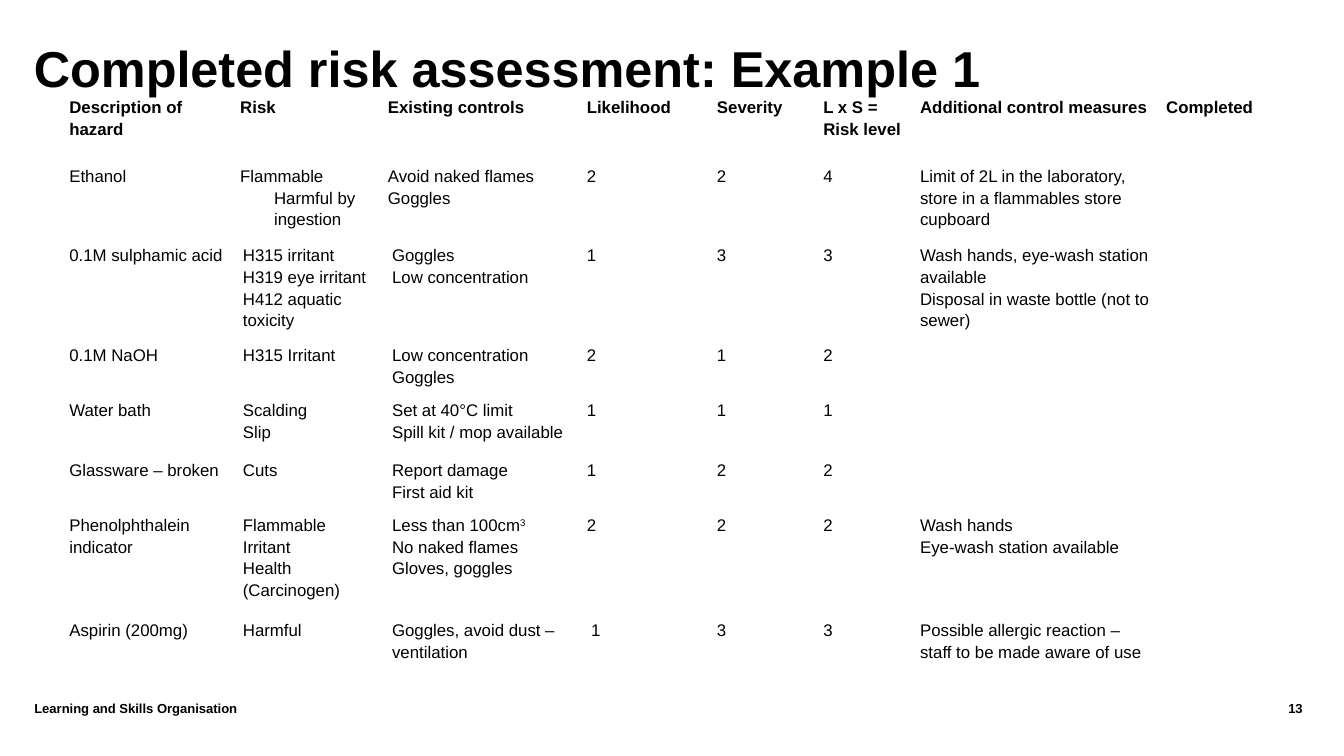
from pptx import Presentation
from pptx.enum.text import MSO_ANCHOR, PP_ALIGN
from pptx.dml.color import RGBColor
from pptx.oxml.ns import qn
from pptx.util import Cm, Pt

LEFT, RIGHT = PP_ALIGN.LEFT, PP_ALIGN.RIGHT
TOP = MSO_ANCHOR.TOP
NO_STYLE_NO_GRID = "{2D5ABB26-0587-4C30-8999-92F81FD0307C}"
COLORS = {"text": "000000"}

COL_WIDTHS = [3.23, 2.79, 3.76, 2.46, 2.01, 1.83, 4.65, 1.98]
ROW_HEIGHTS = [1.3, 1.5, 1.88, 1.04, 1.14, 1.04, 1.98, 1.55]

# One line per paragraph; "^" starts a superscript
ROWS = [
    ["Description of hazard", "Risk", "Existing controls", "Likelihood", "Severity",
     "L x S = Risk level", "Additional control measures", "Completed"],
    ["Ethanol", "Flammable\nHarmful by ingestion", "Avoid naked flames\nGoggles",
     "2", "2", "4",
     "Limit of 2L in the laboratory, store in a flammables store cupboard", ""],
    ["0.1M sulphamic acid", "H315 irritant\nH319 eye irritant\nH412 aquatic toxicity",
     "Goggles\nLow concentration", "1", "3", "3",
     "Wash hands, eye-wash station available\nDisposal in waste bottle (not to sewer)", ""],
    ["0.1M NaOH", "H315 Irritant", "Low concentration\nGoggles", "2", "1", "2", "", ""],
    ["Water bath", "Scalding\nSlip", "Set at 40°C limit\nSpill kit / mop available",
     "1", "1", "1", "", ""],
    ["Glassware – broken", "Cuts", "Report damage\nFirst aid kit", "1", "2", "2", "", ""],
    ["Phenolphthalein indicator", "Flammable\nIrritant\nHealth (Carcinogen)",
     "Less than 100cm^3\nNo naked flames\nGloves, goggles", "2", "2", "2",
     "Wash hands\nEye-wash station available", ""],
    ["Aspirin (200mg)", "Harmful", "Goggles, avoid dust – ventilation", "1", "3", "3",
     "Possible allergic reaction – staff to be made aware of use", ""],
]

HANGING = (0.64, -0.64)
RISK_INDENT, CONTROL_INDENT = (0.05, 0), (0.08, 0)
# Left margin and first-line indent per paragraph, by (row, column)
INDENTS = {(1, 1): [HANGING, (0.64, 0)], (1, 2): [HANGING] * 2, (7, 3): [CONTROL_INDENT]}
for row in range(2, len(ROWS)):
    INDENTS[row, 1] = [RISK_INDENT] * 3
    INDENTS[row, 2] = [CONTROL_INDENT] * 3


class SlideBuilder:
    def __init__(self, s, font="Arial", cell_size=9, line_spacing=1.15):
        self.s = s
        self.font = font
        self.cell_size = cell_size
        self.line_spacing = line_spacing

    def run(self, p, text, size, bold, superscript=False):
        r = p.add_run()
        r.text = text
        r.font.name = self.font
        r.font.size = Pt(size)
        r.font.bold = bold
        r.font.color.rgb = RGBColor.from_string(COLORS["text"])
        if superscript:
            r._r.get_or_add_rPr().set("baseline", "30000")

    def text(self, text, x, y, w, h, size, align=LEFT):
        sp = self.s.shapes.add_textbox(Cm(x), Cm(y), Cm(w), Cm(h))
        tf = sp.text_frame
        tf.word_wrap = True
        tf.vertical_anchor = TOP
        tf.margin_left = tf.margin_right = tf.margin_top = tf.margin_bottom = 0
        p = tf.paragraphs[0]
        p.alignment = align
        self.run(p, text, size, True)

    def cell(self, cell, text, bold, indents):
        cell.fill.background()
        cell.vertical_anchor = TOP
        cell.margin_left = cell.margin_right = Cm(0.12)
        cell.margin_top = cell.margin_bottom = 0
        tf = cell.text_frame
        for i, line in enumerate(text.split("\n") if text else []):
            p = tf.add_paragraph() if i else tf.paragraphs[0]
            p.line_spacing = self.line_spacing
            if indents:
                margin, first = indents[i]
                pPr = p._p.get_or_add_pPr()
                pPr.set("marL", str(Cm(margin)))
                pPr.set("indent", str(Cm(first)))
            base, _, raised = line.partition("^")
            self.run(p, base, self.cell_size, bold)
            if raised:
                self.run(p, raised, self.cell_size, bold, superscript=True)

    def table(self, rows, x, y, widths, heights, indents):
        table = self.s.shapes.add_table(
            len(rows), len(widths), Cm(x), Cm(y), Cm(sum(widths)), Cm(sum(heights))).table
        table.first_row = table.horz_banding = False
        table._tbl.tblPr.find(qn("a:tableStyleId")).text = NO_STYLE_NO_GRID
        for column, width in zip(table.columns, widths):
            column.width = Cm(width)
        for i, (row, height) in enumerate(zip(rows, heights)):
            table.rows[i].height = Cm(height)
            for j, text in enumerate(row):
                self.cell(table.cell(i, j), text, i == 0, indents.get((i, j)))


def main():
    prs = Presentation()
    prs.slide_width, prs.slide_height = Cm(25.4), Cm(14.29)
    slide = SlideBuilder(prs.slides.add_slide(prs.slide_layouts[6]))
    slide.text("Completed risk assessment: Example 1", 0.64, 0.7, 23.44, 1.93, 27)
    slide.text("Learning and Skills Organisation", 0.65, 13.24, 21.36, 0.76, 7)
    slide.text("13", 22.11, 13.24, 2.51, 0.76, 7, RIGHT)
    slide.table(ROWS, 1.19, 1.81, COL_WIDTHS, ROW_HEIGHTS, INDENTS)
    prs.save("out.pptx")


if __name__ == "__main__":
    main()
